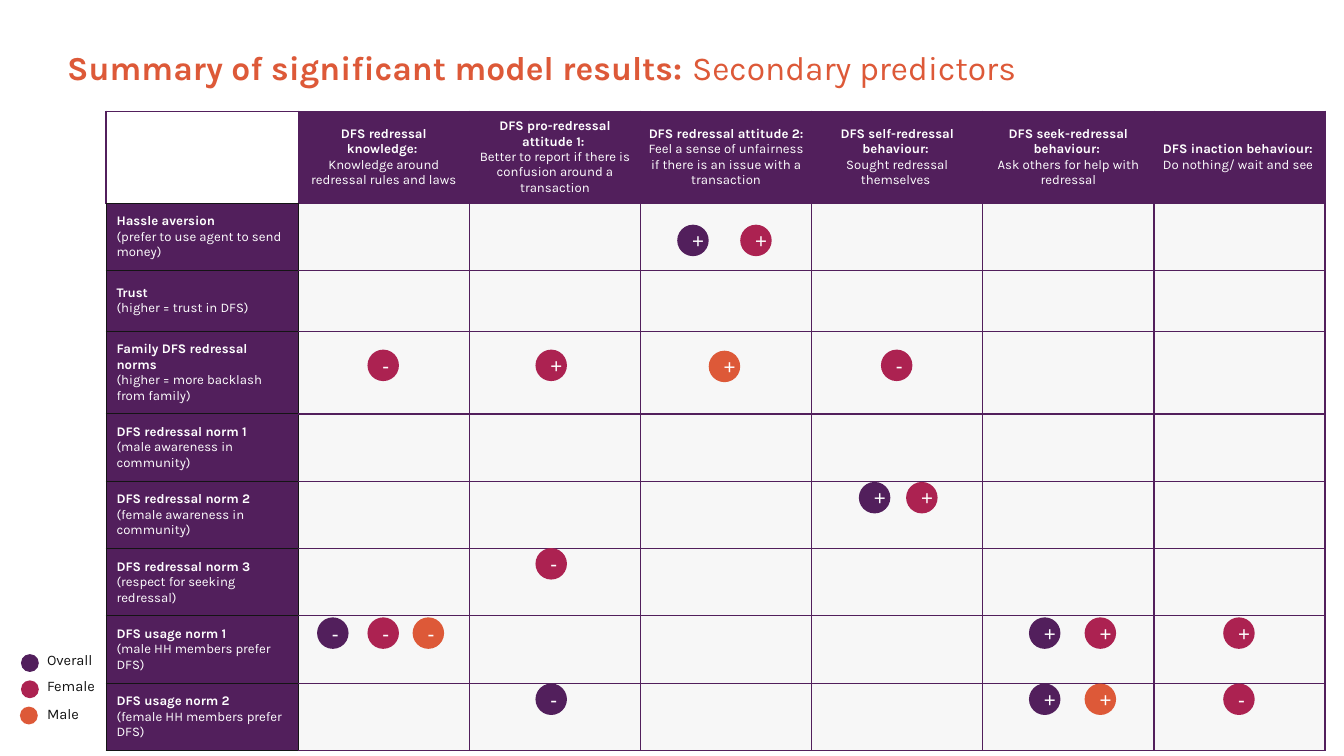
from lxml.etree import SubElement
from pptx import Presentation
from pptx.dml.color import RGBColor
from pptx.enum.shapes import MSO_SHAPE
from pptx.enum.text import MSO_ANCHOR, MSO_AUTO_SIZE, PP_ALIGN
from pptx.oxml.ns import qn
from pptx.util import Inches, Pt

COLORS = {
    "Overall": "521F5C",
    "Female": "AC2251",
    "Male": "DD5938",
    "ink": "141414",
    "cell": "F7F7F7",
    "white": "FFFFFF",
}
HEADERS = [
    ("DFS redressal knowledge: ", "Knowledge around redressal rules and laws"),
    ("DFS pro-redressal attitude 1: ", "Better to report if there is confusion around a transaction"),
    ("DFS redressal attitude 2: ", "Feel a sense of unfairness if there is an issue with a transaction"),
    ("DFS self-redressal behaviour: ", "Sought redressal themselves "),
    ("DFS seek-redressal behaviour: ", "Ask others for help with redressal"),
    ("DFS inaction behaviour: ", "Do nothing/ wait and see "),
]
PREDICTORS = [
    ("Hassle aversion", "(prefer to use agent to send money)", 0.64),
    ("Trust", "(higher = trust in DFS)", 0.58),
    ("Family DFS redressal norms", "(higher = more backlash from family)", 0.78),
    ("DFS redressal norm 1", "(male awareness in community)", 0.64),
    ("DFS redressal norm 2", "(female awareness in community)", 0.64),
    ("DFS redressal norm 3", "(respect for seeking redressal)", 0.64),
    ("DFS usage norm 1", "(male HH members prefer DFS)", 0.64),
    ("DFS usage norm 2", "(female HH members prefer DFS)", 0.64),
]
MARKERS = [
    (2.14, [(6.45, "Overall", "+"), (7.05, "Female", "+")]),
    (3.33, [(3.5, "Female", "-"), (5.1, "Female", "+"), (8.39, "Female", "-")]),
    (3.34, [(6.75, "Male", "+")]),
    (4.59, [(8.18, "Overall", "+"), (8.63, "Female", "+")]),
    (5.22, [(5.1, "Female", "-")]),
    (5.88, [(3.02, "Overall", "-"), (3.5, "Female", "-"), (3.93, "Male", "-"),
            (9.8, "Overall", "+"), (10.33, "Female", "+"), (11.65, "Female", "+")]),
    (6.51, [(5.1, "Overall", "-"), (9.8, "Overall", "+"), (10.33, "Male", "+"),
            (11.65, "Female", "-")]),
]
LEGEND = [("Overall", 0.2, 6.23, 6.12), ("Female", 0.2, 6.48, 6.36), ("Male", 0.19, 6.73, 6.63)]


def add_run(paragraph, text, size, color, font="Karla", bold=False):
    run = paragraph.add_run()
    run.text = text
    run.font.name = font
    run.font.size = Pt(size)
    run.font.bold = bold
    run.font.color.rgb = RGBColor.from_string(COLORS[color])


def add_circle(left, top, diameter, color):
    circle = slide.shapes.add_shape(
        MSO_SHAPE.OVAL, Inches(left), Inches(top), Inches(diameter), Inches(diameter))
    circle.shadow.inherit = False
    circle.fill.solid()
    circle.fill.fore_color.rgb = RGBColor.from_string(COLORS[color])
    circle.line.fill.background()
    return circle


presentation = Presentation()
presentation.slide_width = Inches(12.8)
presentation.slide_height = Inches(7.2)
slide = presentation.slides.add_slide(presentation.slide_layouts[5])

title = slide.shapes.title
title.left, title.top, title.width, title.height = map(Inches, (0.64, 0.04, 11.52, 1.2))
title_frame = title.text_frame
title_frame.margin_left = title_frame.margin_right = 0
title_frame.margin_top = title_frame.margin_bottom = 0
title_frame.vertical_anchor = MSO_ANCHOR.MIDDLE
title_frame.auto_size = MSO_AUTO_SIZE.NONE
title_paragraph = title_frame.paragraphs[0]
title_paragraph.alignment = PP_ALIGN.LEFT
add_run(title_paragraph, "Summary of significant model results: ", 23, "Male", bold=True)
add_run(title_paragraph, "Secondary predictors", 23, "Male")

row_heights = [0.86] + [height for name, detail, height in PREDICTORS]
column_widths = [1.83] + [1.63] * len(HEADERS)
table = slide.shapes.add_table(
    len(row_heights), len(column_widths), Inches(1.01), Inches(1.06),
    Inches(sum(column_widths)), Inches(sum(row_heights))).table
table.first_row = False
table.horz_banding = False
for column, width in zip(table.columns, column_widths):
    column.width = Inches(width)
for row, height in zip(table.rows, row_heights):
    row.height = Inches(height)

for row_index in range(len(row_heights)):
    for column_index in range(len(column_widths)):
        cell = table.cell(row_index, column_index)
        is_header = row_index == 0
        is_label = column_index == 0 and not is_header
        is_corner = column_index == 0 and is_header
        properties = cell._tc.get_or_add_tcPr()
        for side in "LRTB":
            dark = (is_label or (is_corner and side == "B")
                    or (column_index == 1 and not is_header and side == "L"))
            border = SubElement(properties, qn("a:ln" + side), w=str(Pt(0.75 if dark else 1)))
            border_fill = SubElement(border, qn("a:solidFill"))
            SubElement(border_fill, qn("a:srgbClr"), val=COLORS["ink" if dark else "Overall"])
        fill = "white" if is_corner else "Overall" if is_header or is_label else "cell"
        cell.fill.solid()
        cell.fill.fore_color.rgb = RGBColor.from_string(COLORS[fill])
        if fill != "Overall":
            continue
        heading, detail = HEADERS[column_index - 1] if is_header else PREDICTORS[row_index - 1][:2]
        margin = Inches(0.07 if is_header else 0.1)
        cell.margin_left = cell.margin_right = margin
        cell.margin_top = cell.margin_bottom = margin
        cell.vertical_anchor = MSO_ANCHOR.MIDDLE
        heading_paragraph = cell.text_frame.paragraphs[0]
        detail_paragraph = cell.text_frame.add_paragraph()
        add_run(heading_paragraph, heading, 9, "white", bold=True)
        add_run(detail_paragraph, detail, 9, "white")
        for paragraph in (heading_paragraph, detail_paragraph):
            paragraph.alignment = PP_ALIGN.CENTER if is_header else PP_ALIGN.LEFT

for top, row_markers in MARKERS:
    for left, group, sign in row_markers:
        marker_frame = add_circle(left, top, 0.3, group).text_frame
        marker_frame.margin_left = marker_frame.margin_right = Inches(0.1)
        marker_frame.margin_top = marker_frame.margin_bottom = Inches(0.1)
        marker_frame.vertical_anchor = MSO_ANCHOR.MIDDLE
        marker_frame.paragraphs[0].alignment = PP_ALIGN.LEFT
        add_run(marker_frame.paragraphs[0], sign, 14, "white", font="Arial")

for group, dot_left, dot_top, label_top in LEGEND:
    add_circle(dot_left, dot_top, 0.17, group)
    label = slide.shapes.add_textbox(Inches(0.35), Inches(label_top), Inches(1.44), Inches(0.37))
    label_frame = label.text_frame
    label_frame.word_wrap = True
    label_frame.margin_left = label_frame.margin_right = Inches(0.1)
    label_frame.margin_top = label_frame.margin_bottom = Inches(0.1)
    add_run(label_frame.paragraphs[0], group, 10, "ink")

presentation.save("out.pptx")
